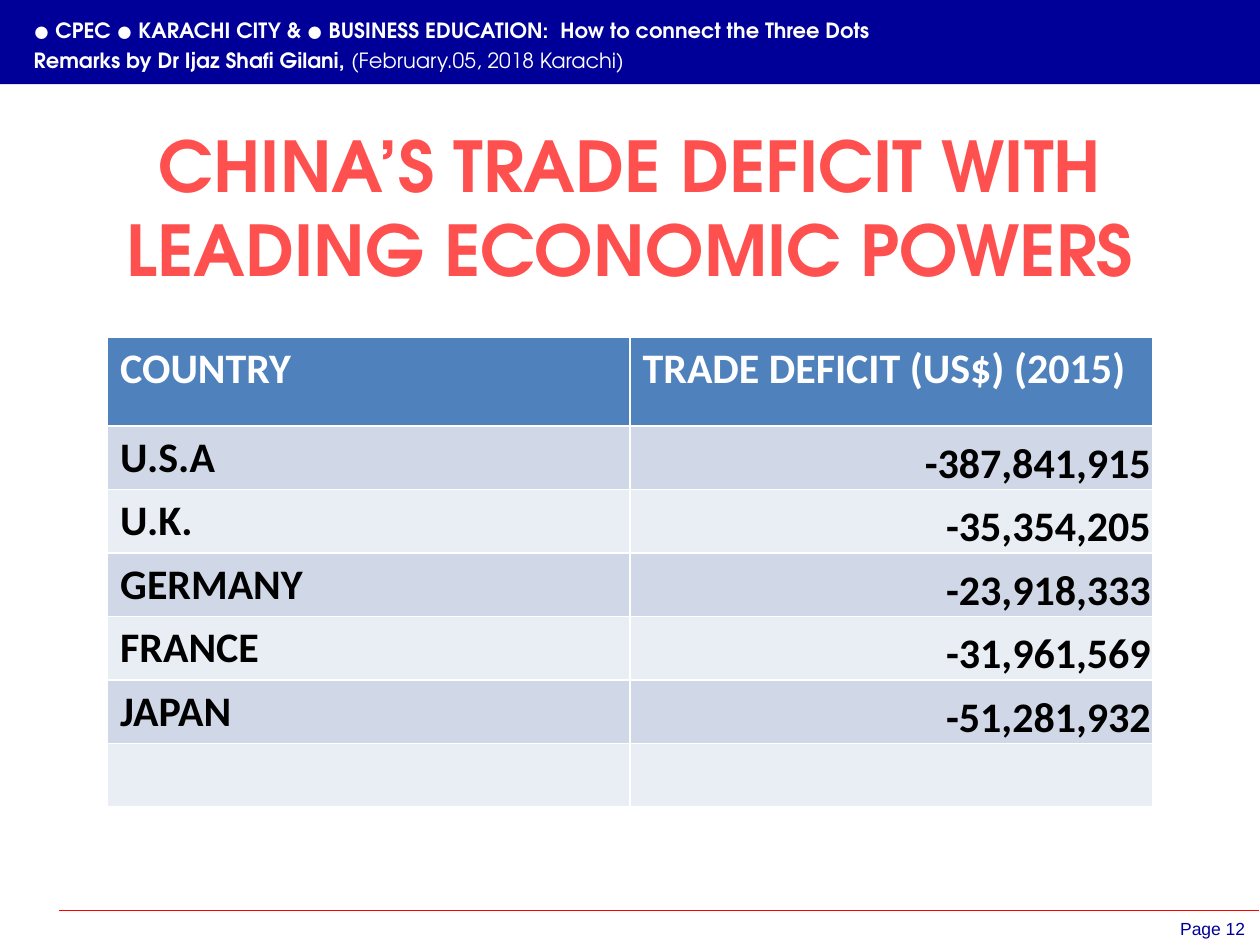
from lxml import etree
from pptx import Presentation
from pptx.dml.color import RGBColor
from pptx.enum import shapes, text
from pptx.oxml.ns import qn
from pptx.util import Cm, Pt

COLORS = {
    "navy": "000099", "red": "FF0000", "coral": "FF5050", "white": "FFFFFF",
    "black": "000000", "header": "4F81BD", "band_dark": "D0D8E8", "band_light": "E9EDF4",
}
DISPLAY_FONT = "TeX Gyre Adventor"
TITLE = "CHINA’S TRADE DEFICIT WITH LEADING ECONOMIC POWERS"
# Each banner line is a list of (text, bold) runs.
BANNER = [
    [("● CPEC ● KARACHI CITY & ● BUSINESS EDUCATION:  How to connect the Three Dots", True)],
    [("Remarks by Dr Ijaz Shafi Gilani, ", True), ("(February.05, 2018 Karachi)", False)],
]
PAGE_LABEL = "Page 12"
TABLE_ROWS = [
    ("COUNTRY", "TRADE DEFICIT (US$) (2015)"),
    ("U.S.A", "-387,841,915"),
    ("U.K.", "-35,354,205"),
    ("GERMANY", "-23,918,333"),
    ("FRANCE", "-31,961,569"),
    ("JAPAN", "-51,281,932"),
    ("", ""),
]
HEADER_HEIGHT, ROW_HEIGHT, COLUMN_WIDTH = Cm(1.8), Cm(1.28), Cm(10.53)


def color(name):
    return RGBColor.from_string(COLORS[name])


def format_font(font, name, size, color_name, bold=False):
    font.name, font.size, font.bold = name, Pt(size), bold
    font.color.rgb = color(color_name)


def place(shape, left, top, width, height):
    shape.left, shape.top, shape.width, shape.height = map(Cm, (left, top, width, height))


def add_banner(slide):
    bar = slide.shapes.add_shape(shapes.MSO_SHAPE.RECTANGLE, 0, 0, Cm(25.4), Cm(1.7))
    bar.shadow.inherit = False
    bar.fill.solid()
    bar.fill.fore_color.rgb = color("navy")
    bar.line.fill.background()

    frame = slide.shapes.add_textbox(Cm(0.43), Cm(0.13), Cm(24.13), Cm(2.2)).text_frame
    frame.word_wrap = True
    for index, line in enumerate(BANNER):
        paragraph = frame.add_paragraph() if index else frame.paragraphs[0]
        paragraph.line_spacing = 1.2
        for words, bold in line:
            run = paragraph.add_run()
            run.text = words
            format_font(run.font, DISPLAY_FONT, 12, "white", bold)


def add_title(slide):
    title = slide.shapes.title
    place(title, 0, 2.34, 25.4, 4.3)
    frame = title.text_frame
    frame.text = TITLE
    frame.word_wrap = True
    frame.auto_size = text.MSO_AUTO_SIZE.NONE
    frame.vertical_anchor = text.MSO_ANCHOR.TOP
    paragraph = frame.paragraphs[0]
    paragraph.alignment = text.PP_ALIGN.CENTER
    format_font(paragraph.runs[0].font, DISPLAY_FONT, 40, "coral", True)


def add_deficit_table(slide):
    body_count = len(TABLE_ROWS) - 1
    table = slide.shapes.add_table(
        len(TABLE_ROWS), 2, Cm(2.17), Cm(6.79),
        2 * COLUMN_WIDTH, HEADER_HEIGHT + body_count * ROW_HEIGHT).table
    for column in table.columns:
        column.width = COLUMN_WIDTH
    for row_index, values in enumerate(TABLE_ROWS):
        is_header = row_index == 0
        table.rows[row_index].height = HEADER_HEIGHT if is_header else ROW_HEIGHT
        band = "header" if is_header else ("band_light", "band_dark")[row_index % 2]
        for column_index, value in enumerate(values):
            cell = table.cell(row_index, column_index)
            cell.fill.solid()
            cell.fill.fore_color.rgb = color(band)
            cell.text = value
            paragraph = cell.text_frame.paragraphs[0]
            for run in paragraph.runs:
                format_font(run.font, "Calibri", 24, "white" if is_header else "black", True)
            if value and column_index and not is_header:
                paragraph.alignment = text.PP_ALIGN.RIGHT
                cell.vertical_anchor = text.MSO_ANCHOR.BOTTOM
                cell.margin_left = cell.margin_right = cell.margin_top = Cm(0.03)
                cell.margin_bottom = 0


def add_footer(slide):
    rule = slide.shapes.add_connector(
        shapes.MSO_CONNECTOR.STRAIGHT, Cm(1.19), Cm(18.36), Cm(25.37), Cm(18.36))
    rule.line.color.rgb = color("red")
    rule.line.width = Pt(0.75)
    etree.SubElement(rule._element.spPr, qn("a:effectLst"))

    frame = slide.shapes.add_textbox(Cm(19.43), Cm(18.21), Cm(5.92), Cm(1.02)).text_frame
    frame.word_wrap = True
    frame.vertical_anchor = text.MSO_ANCHOR.MIDDLE
    frame.text = PAGE_LABEL
    paragraph = frame.paragraphs[0]
    paragraph.alignment = text.PP_ALIGN.RIGHT
    format_font(paragraph.runs[0].font, "Arial", 10, "navy")


def main():
    presentation = Presentation()
    presentation.slide_width, presentation.slide_height = Cm(25.4), Cm(19.05)
    slide = presentation.slides.add_slide(presentation.slide_layouts[5])
    add_banner(slide)
    add_footer(slide)
    add_title(slide)
    add_deficit_table(slide)
    presentation.save("out.pptx")


if __name__ == "__main__":
    main()
